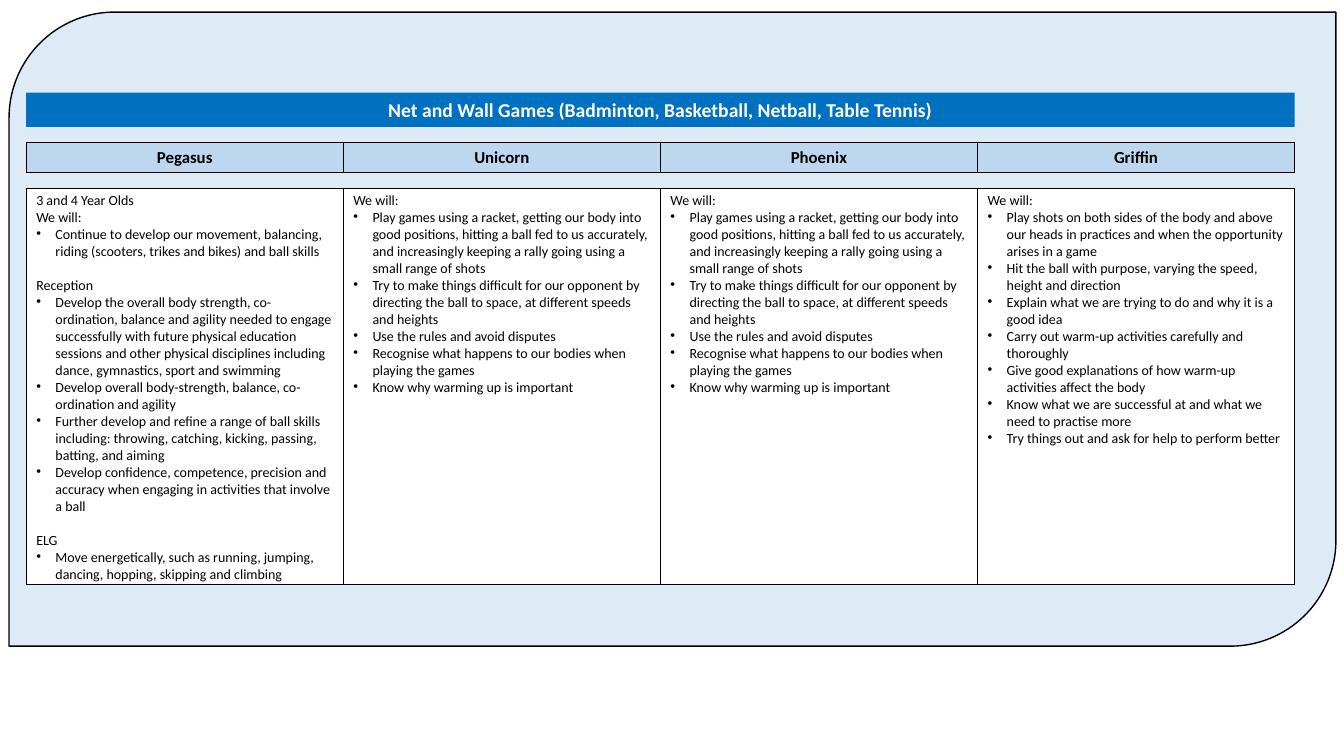
from dataclasses import dataclass

from lxml.etree import SubElement
from pptx import Presentation
from pptx.dml.color import RGBColor
from pptx.enum.shapes import MSO_SHAPE
from pptx.enum.text import MSO_ANCHOR, MSO_AUTO_SIZE, PP_ALIGN
from pptx.oxml.ns import qn
from pptx.util import Inches, Pt

# Content: each class has sections of (headings, bullets)
TITLE = "Net and Wall Games (Badminton, Basketball, Netball, Table Tennis)"
RACKET_SECTIONS = [
    (["We will:"], [
        "Play games using a racket, getting our body into good positions, hitting a ball fed to us "
        "accurately, and increasingly keeping a rally going using a small range of shots",
        "Try to make things difficult for our opponent by directing the ball to space, "
        "at different speeds and heights",
        "Use the rules and avoid disputes",
        "Recognise what happens to our bodies when playing the games",
        "Know why warming up is important",
    ]),
]
CLASSES = {
    "Pegasus": [
        (["3 and 4 Year Olds", "We will:"], [
            "Continue to develop our movement, balancing, riding (scooters, trikes and bikes) "
            "and ball skills",
        ]),
        (["Reception"], [
            "Develop the overall body strength, co-ordination, balance and agility needed to engage "
            "successfully with future physical education sessions and other physical disciplines "
            "including dance, gymnastics, sport and swimming",
            "Develop overall body-strength, balance, co-ordination and agility",
            "Further develop and refine a range of ball skills including: throwing, catching, "
            "kicking, passing, batting, and aiming",
            "Develop confidence, competence, precision and accuracy when engaging in activities "
            "that involve a ball",
        ]),
        (["ELG"], [
            "Move energetically, such as running, jumping, dancing, hopping, skipping and climbing",
        ]),
    ],
    "Unicorn": RACKET_SECTIONS,
    "Phoenix": RACKET_SECTIONS,
    "Griffin": [
        (["We will:"], [
            "Play shots on both sides of the body and above our heads in practices and when the "
            "opportunity arises in a game",
            "Hit the ball with purpose, varying the speed, height and direction",
            "Explain what we are trying to do and why it is a good idea",
            "Carry out warm-up activities carefully and thoroughly",
            "Give good explanations of how warm-up activities affect the body",
            "Know what we are successful at and what we need to practise more",
            "Try things out and ask for help to perform better",
        ]),
    ],
}


@dataclass(frozen=True)
class Theme:
    font: str = "Calibri"
    title_size: float = 14
    class_size: float = 12
    body_size: float = 10
    section_gap: float = 12.2
    border: float = 0.5
    panel: str = "DEEBF7"
    banner: str = "0070C0"
    header: str = "BDD7EE"
    white: str = "FFFFFF"
    black: str = "000000"


THEME = Theme()
LEFT, WIDTH = Inches(0.26), Inches(12.58)
BULLET_INDENT = Inches(0.19)


def paint(target, color):
    target.fill.solid()
    target.fill.fore_color.rgb = RGBColor.from_string(color)


def style(paragraph, size, color=THEME.black, bold=False, align=PP_ALIGN.LEFT):
    paragraph.alignment = align
    font = paragraph.font
    font.name, font.size, font.bold = THEME.font, Pt(size), bold
    font.color.rgb = RGBColor.from_string(color)


def add_bullet(paragraph):
    properties = paragraph._p.get_or_add_pPr()
    properties.set("marL", str(BULLET_INDENT))
    properties.set("indent", str(-BULLET_INDENT))
    bullet = properties.makeelement(qn("a:buChar"), {"char": "•"})
    properties.insert_element_before(bullet, "a:tabLst", "a:defRPr", "a:extLst")


def add_borders(cell):
    properties = cell._tc.get_or_add_tcPr()
    for index, side in enumerate(("lnL", "lnR", "lnT", "lnB")):
        line = properties.makeelement(qn(f"a:{side}"), {"w": str(Pt(THEME.border))})
        fill = SubElement(line, qn("a:solidFill"))
        SubElement(fill, qn("a:srgbClr"), val=THEME.black)
        properties.insert(index, line)


def add_row(slide, top, height, color):
    """Add a one-row table with a column per class and return its cells."""
    frame = slide.shapes.add_table(1, len(CLASSES), LEFT, top, WIDTH, height)
    cells = list(frame.table.rows[0].cells)
    for cell in cells:
        paint(cell, color)
        add_borders(cell)
    return cells


def fill_sections(cell, sections):
    lines = []
    for number, (headings, bullets) in enumerate(sections):
        for position, heading in enumerate(headings):
            lines.append((heading, False, number > 0 and position == 0))
        lines += [(bullet, True, False) for bullet in bullets]
    cell.margin_top, cell.margin_bottom = Inches(0.04), 0
    cell.text = "\n".join(text for text, _, _ in lines)
    for paragraph, (_, bulleted, gap) in zip(cell.text_frame.paragraphs, lines):
        style(paragraph, THEME.body_size)
        if gap:
            paragraph.space_before = Pt(THEME.section_gap)
        if bulleted:
            add_bullet(paragraph)


def main():
    deck = Presentation()
    deck.slide_width, deck.slide_height = Inches(13.33), Inches(7.5)
    slide = deck.slides.add_slide(deck.slide_layouts[5])

    # Background panel
    panel = slide.shapes.add_shape(MSO_SHAPE.ROUND_2_DIAG_RECTANGLE, Inches(0.09),
                                   Inches(0.12), Inches(13.16), Inches(6.29))
    panel.shadow.inherit = False
    paint(panel, THEME.panel)
    panel.line.color.rgb = RGBColor.from_string(THEME.black)
    panel.line.width = Pt(1)

    # Title banner, in front of the panel
    banner = slide.shapes.title
    panel._element.addnext(banner._element)
    banner.left, banner.top, banner.width, banner.height = LEFT, Inches(0.92), WIDTH, Inches(0.34)
    paint(banner, THEME.banner)
    banner.text_frame.text = TITLE
    banner.text_frame.auto_size = MSO_AUTO_SIZE.NONE
    banner.text_frame.vertical_anchor = MSO_ANCHOR.MIDDLE
    style(banner.text_frame.paragraphs[0], THEME.title_size, THEME.white, True, PP_ALIGN.CENTER)

    # Class names
    for cell, name in zip(add_row(slide, Inches(1.41), Inches(0.3), THEME.header), CLASSES):
        cell.text = name
        style(cell.text_frame.paragraphs[0], THEME.class_size, bold=True, align=PP_ALIGN.CENTER)

    # Learning aims
    aims = add_row(slide, Inches(1.87), Inches(3.93), THEME.white)
    for cell, sections in zip(aims, CLASSES.values()):
        fill_sections(cell, sections)

    deck.save("out.pptx")


if __name__ == "__main__":
    main()
